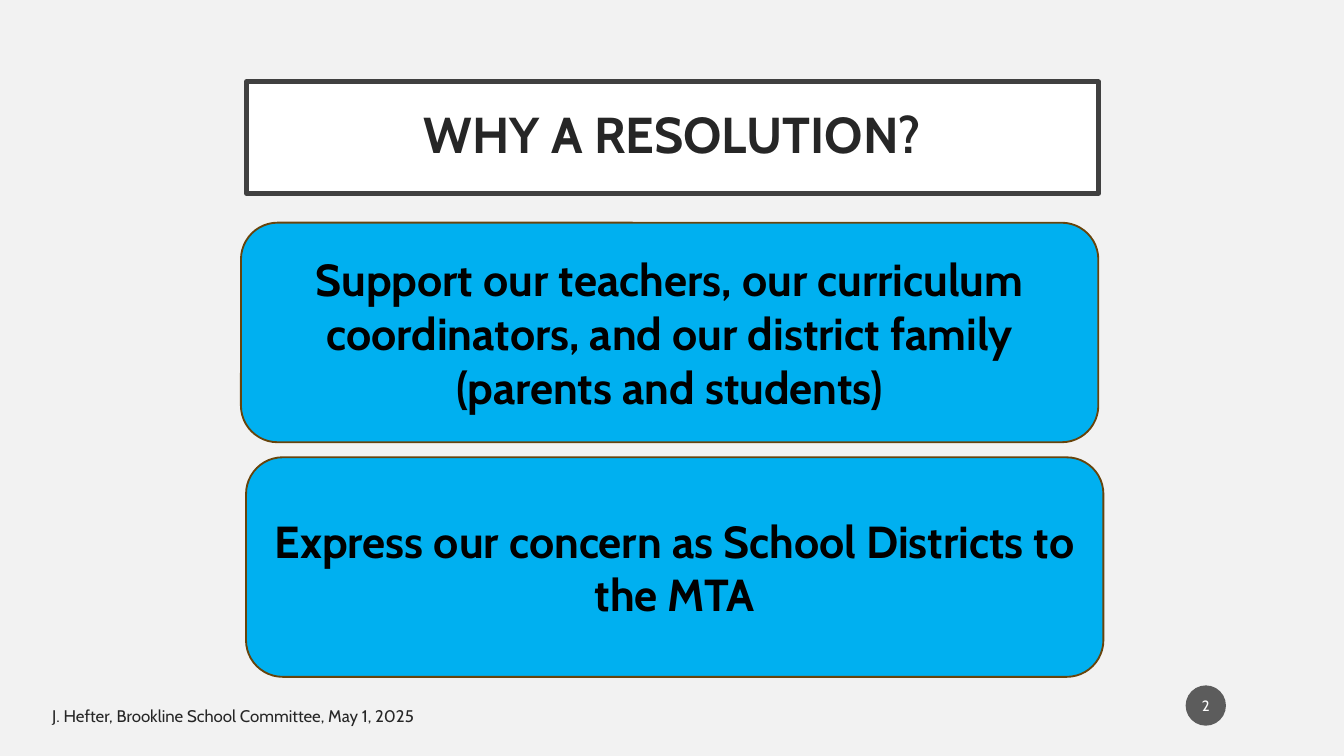
from lxml import etree
from pptx import Presentation
from pptx.dml.color import RGBColor
from pptx.enum import shapes, text
from pptx.oxml.ns import qn
from pptx.util import Pt

COLORS = {
    "page": "F2F2F2",
    "white": "FFFFFF",
    "black": "000000",
    "ink": "262626",
    "frame": "404040",
    "card": "00B0F0",
    "card_line": "67440C",
    "badge": "1D1D1D",
}


def color(name):
    return RGBColor.from_string(COLORS[name])


def write(box, words, size, ink, bold=False, align=text.PP_ALIGN.CENTER,
          anchor=text.MSO_ANCHOR.MIDDLE, inset=(5, 3), spacing=None):
    """Fill a box with one paragraph; inset is (sides, top and bottom) in points."""
    frame = box.text_frame
    frame.word_wrap = True
    frame.auto_size = text.MSO_AUTO_SIZE.NONE
    frame.vertical_anchor = anchor
    frame.margin_left = frame.margin_right = Pt(inset[0])
    frame.margin_top = frame.margin_bottom = Pt(inset[1])
    para = frame.paragraphs[0]
    para.alignment = align
    para.line_spacing = spacing
    span = para.add_run()
    span.text = words
    span.font.name = "Cabin"
    span.font.size = Pt(size)
    span.font.bold = bold
    span.font.color.rgb = color(ink)


deck = Presentation()
deck.slide_width, deck.slide_height = Pt(720), Pt(405)
page = deck.slides.add_slide(deck.slide_layouts[5])
page.background.fill.solid()
page.background.fill.fore_color.rgb = color("page")

# Title
title = page.shapes.title
title.left, title.top, title.width, title.height = Pt(132), Pt(43.8), Pt(456.5), Pt(59.8)
title.fill.solid()
title.fill.fore_color.rgb = color("white")
title.line.color.rgb = color("frame")
title.line.width = Pt(2.5)
write(title, "WHY A RESOLUTION?", 27, "ink", bold=True, inset=(10.8, 10.8), spacing=0.9)

# Reasons
reasons = [
    (129.1, 119.3, "Support our teachers, our curriculum coordinators, "
                   "and our district family (parents and students)"),
    (131.8, 245, "Express our concern as School Districts to the MTA"),
]
for left, top, words in reasons:
    card = page.shapes.add_shape(shapes.MSO_SHAPE.ROUNDED_RECTANGLE,
                                 Pt(left), Pt(top), Pt(459.3), Pt(117.6))
    card.shadow.inherit = False
    card.adjustments[0] = 0.167
    card.fill.solid()
    card.fill.fore_color.rgb = color("card")
    card.line.color.rgb = color("card_line")
    card.line.width = Pt(1)
    write(card, words, 24, "black", bold=True)

# Page number
badge = page.shapes.add_shape(shapes.MSO_SHAPE.OVAL, Pt(635.2), Pt(367.2), Pt(21.6), Pt(21.6))
badge.shadow.inherit = False
badge.fill.solid()
badge.fill.fore_color.rgb = color("badge")
tint = badge.fill._xPr.find(qn("a:solidFill"))[0]
etree.SubElement(tint, qn("a:alpha"), val="70000")
badge.line.fill.background()
write(badge, "2", 8, "white", inset=(1, 3))

# Footer
footer = page.shapes.add_textbox(Pt(20.9), Pt(370.8), Pt(211.7), Pt(29.5))
write(footer, "J. Hefter, Brookline School Committee, May 1, 2025", 9, "ink",
      align=text.PP_ALIGN.LEFT, anchor=text.MSO_ANCHOR.TOP, inset=(7.2, 7.2))

deck.save("out.pptx")
